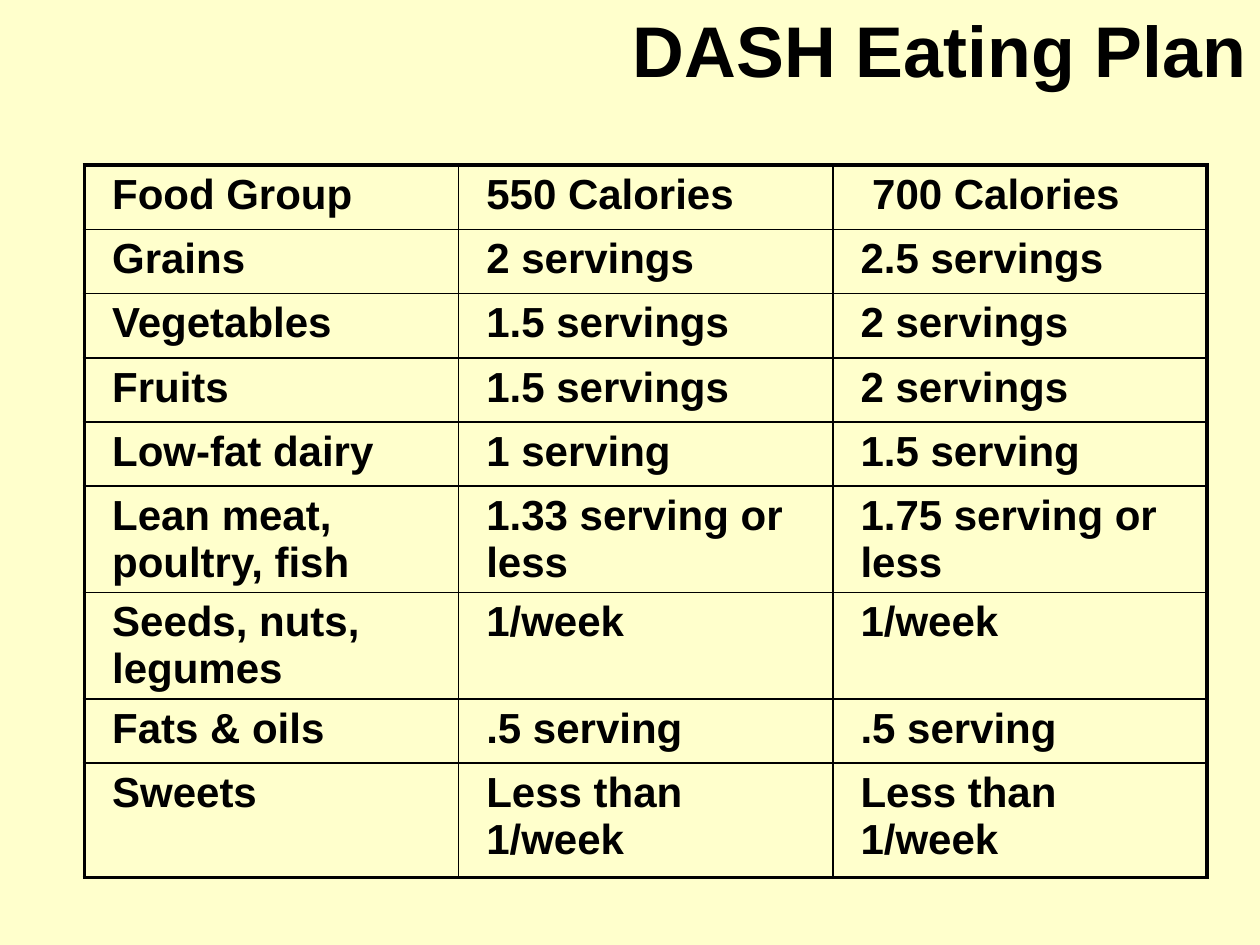
from dataclasses import dataclass

from lxml import etree
from pptx import Presentation
from pptx import util as u
from pptx.dml import color
from pptx.enum import text
from pptx.oxml import ns


@dataclass(frozen=True)
class Theme:
    """Colours, font and sizes of the slide."""
    background: str = "FFFFCC"
    ink: str = "000000"
    font: str = "Arial"
    title_size: int = 41
    cell_size: int = 24
    inner_line: float = 1
    outer_line: float = 2.25


THEME = Theme()

SERVINGS = [
    ("Food Group", "550 Calories", " 700 Calories"),
    ("Grains", "2 servings", "2.5 servings"),
    ("Vegetables", "1.5 servings", "2 servings"),
    ("Fruits", "1.5 servings", "2 servings"),
    ("Low-fat dairy", "1 serving", "1.5 serving"),
    ("Lean meat, poultry, fish", "1.33 serving or less", "1.75 serving or less"),
    ("Seeds, nuts, legumes", "1/week", "1/week"),
    ("Fats & oils", ".5 serving", ".5 serving"),
    ("Sweets", "Less than 1/week", "Less than 1/week"),
]
ROW_HEIGHTS = [0.51] * 5 + [0.84] * 2 + [0.51, 0.91]
COLUMN_WIDTH = 2.97


def write(tf, content, *, size, align=text.PP_ALIGN.LEFT, indent=0):
    """Write one bold paragraph into a text frame."""
    tf.word_wrap = True
    p = tf.paragraphs[0]
    p.alignment = align
    if indent:
        p._p.get_or_add_pPr().set("marL", str(u.Inches(indent)))
    r = p.add_run()
    r.text = content
    r.font.name = THEME.font
    r.font.size = u.Pt(size)
    r.font.bold = True
    r.font.color.rgb = color.RGBColor.from_string(THEME.ink)


def set_border(cell, side, width):
    """Draw one side of a cell: L, R, T or B."""
    ln = etree.SubElement(cell._tc.get_or_add_tcPr(), ns.qn(f"a:ln{side}"), w=str(u.Pt(width)))
    fill = etree.SubElement(ln, ns.qn("a:solidFill"))
    etree.SubElement(fill, ns.qn("a:srgbClr"), val=THEME.ink)


def add_title(s, content):
    """Place and fill the title placeholder."""
    sp = s.shapes.title
    sp.left, sp.top = u.Inches(1), u.Inches(-0.24)
    sp.width, sp.height = u.Inches(9), u.Inches(1.25)
    sp.text_frame.vertical_anchor = text.MSO_ANCHOR.MIDDLE
    write(sp.text_frame, content, size=THEME.title_size, align=text.PP_ALIGN.RIGHT)


def add_servings_table(s, rows):
    """Add the servings grid with a heavy outer frame."""
    n_rows, n_cols = len(rows), len(rows[0])
    table = s.shapes.add_table(
        n_rows, n_cols, u.Inches(0.67), u.Inches(1.31),
        u.Inches(COLUMN_WIDTH * n_cols), u.Inches(sum(ROW_HEIGHTS))).table
    table.first_row = table.horz_banding = False
    for column in table.columns:
        column.width = u.Inches(COLUMN_WIDTH)
    for i, (row, height) in enumerate(zip(rows, ROW_HEIGHTS)):
        table.rows[i].height = u.Inches(height)
        for j, content in enumerate(row):
            cell = table.cell(i, j)
            write(cell.text_frame, content, size=THEME.cell_size, indent=0.12)
            outer = {"L": j == 0, "R": j == n_cols - 1, "T": i == 0, "B": i == n_rows - 1}
            for side, is_outer in outer.items():
                set_border(cell, side, THEME.outer_line if is_outer else THEME.inner_line)
            cell.fill.background()


def main():
    """Build and save the slide."""
    prs = Presentation()
    prs.slide_width, prs.slide_height = u.Inches(10), u.Inches(7.5)
    s = prs.slides.add_slide(prs.slide_layouts.get_by_name("Title Only"))
    s.background.fill.solid()
    s.background.fill.fore_color.rgb = color.RGBColor.from_string(THEME.background)
    add_title(s, "DASH Eating Plan")
    add_servings_table(s, SERVINGS)
    prs.save("out.pptx")


if __name__ == "__main__":
    main()
